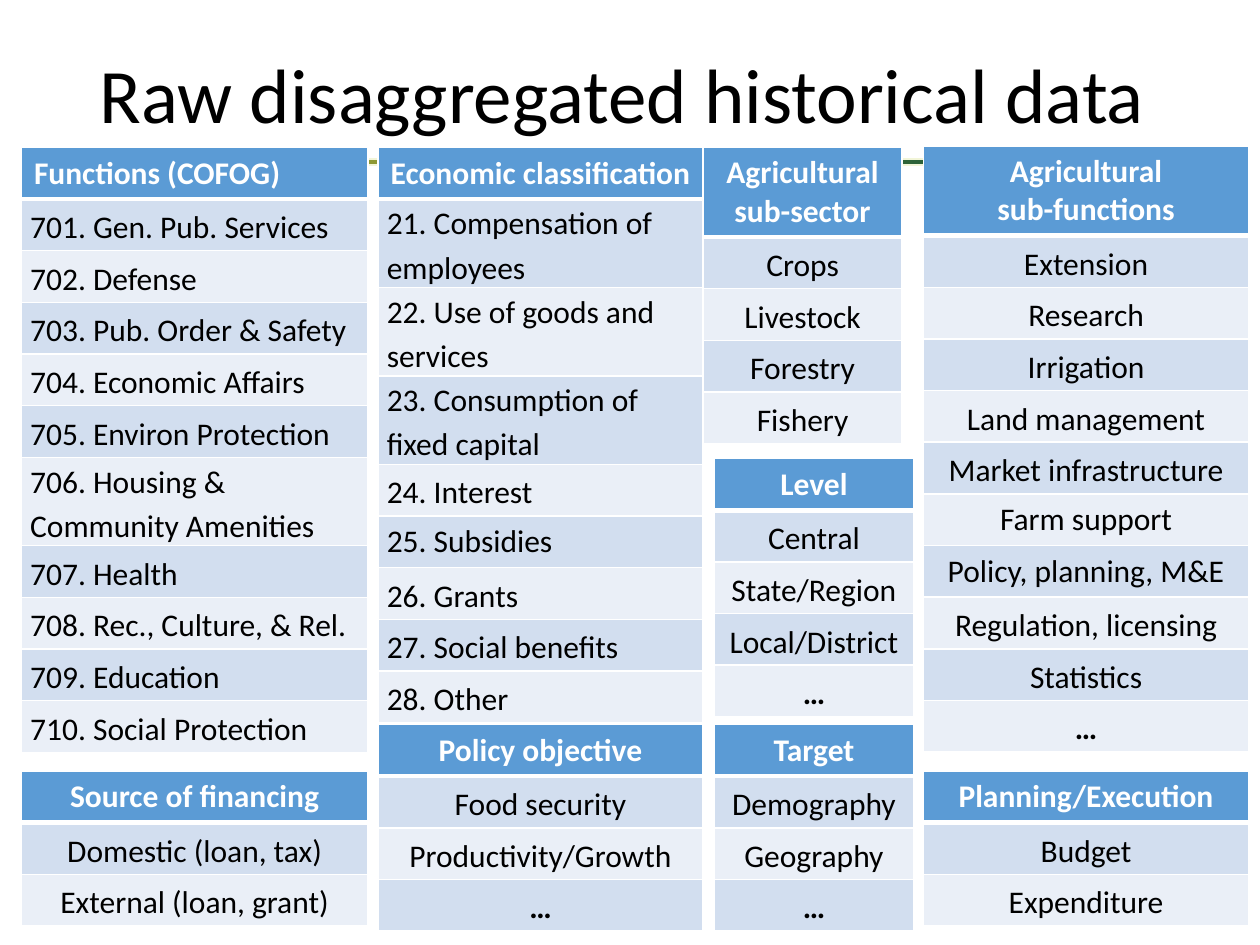
from lxml import etree
from pptx import Presentation
from pptx.dml.color import RGBColor
from pptx.enum.shapes import MSO_SHAPE
from pptx.enum.text import MSO_ANCHOR, PP_ALIGN
from pptx.oxml.ns import qn
from pptx.util import Inches, Pt

RECT = MSO_SHAPE.RECTANGLE
MIDDLE = MSO_ANCHOR.MIDDLE
LEFT, CENTER = PP_ALIGN.LEFT, PP_ALIGN.CENTER

# Content
TITLE = "Raw disaggregated historical data"
FUNCTIONS = [
    "Functions (COFOG)", "701. Gen. Pub. Services", "702. Defense",
    "703. Pub. Order & Safety", "704. Economic Affairs", "705. Environ Protection",
    "706. Housing & Community Amenities", "707. Health",
    "708. Rec., Culture, & Rel.", "709. Education", "710. Social Protection",
]
ECONOMIC = [
    "Economic classification", "21. Compensation of employees",
    "22. Use of goods and services", "23. Consumption of fixed capital",
    "24. Interest", "25. Subsidies", "26. Grants", "27. Social benefits", "28. Other",
]
SUB_SECTORS = ["Agricultural sub-sector", "Crops", "Livestock", "Forestry", "Fishery"]
SUB_FUNCTIONS = [
    "Agricultural\nsub-functions", "Extension", "Research", "Irrigation",
    "Land management", "Market infrastructure", "Farm support",
    "Policy, planning, M&E", "Regulation, licensing", "Statistics", "…",
]
LEVELS = ["Level", "Central", "State/Region", "Local/District", "…"]
OBJECTIVES = ["Policy objective", "Food security", "Productivity/Growth", "…"]
TARGETS = ["Target", "Demography", "Geography", "…"]
PLANNING = ["Planning/Execution", "Budget", "Expenditure"]
FINANCING = ["Source of financing", "Domestic (loan, tax)", "External (loan, grant)"]
SINGLE_SPACED = {"25. Subsidies", "Farm support", "Policy, planning, M&E"}
NO_SIDE_MARGIN = {"Demography"}

# Grid: column (left, width) and tops, in inches
COLUMNS = {
    "functions": (0.17, 2.75),
    "economic": (3, 2.58),
    "sub-sector": (5.58, 1.58),
    "level": (5.67, 1.58),
    "sub-functions": (7.33, 2.58),
}
TOP, LEVEL_TOP, POLICY_TOP, BOTTOM_TOP = 1.17, 3.64, 5.75, 6.12
ROW_HEIGHT = 0.41
TABLES = [
    (FUNCTIONS, "functions", TOP, LEFT),
    (ECONOMIC, "economic", TOP, LEFT),
    (SUB_SECTORS, "sub-sector", TOP, CENTER),
    (SUB_FUNCTIONS, "sub-functions", 1.16, CENTER),
    (LEVELS, "level", LEVEL_TOP, CENTER),
    (OBJECTIVES, "economic", POLICY_TOP, CENTER),
    (TARGETS, "level", POLICY_TOP, CENTER),
    (PLANNING, "sub-functions", BOTTOM_TOP, CENTER),
    (FINANCING, "functions", BOTTOM_TOP, CENTER),
]

FONT = "Calibri"
COLORS = {
    "header": "5B9BD5", "odd": "D2DEEF", "even": "EAEFF7",
    "white": "FFFFFF", "text": "000000",
    "rule_start": "C0B430", "rule_end": "00493A", "rule_line": "F2F5D8",
}


def color(name):
    return RGBColor.from_string(COLORS[name])


def set_font(paragraph, size, color_name, bold=False):
    font = paragraph.font
    font.name, font.size, font.bold = FONT, Pt(size), bold
    font.color.rgb = color(color_name)


def add_borders(cell, top, bottom):
    properties = cell._tc.get_or_add_tcPr()
    for side, points in (("L", 1), ("R", 1), ("T", top), ("B", bottom)):
        line = etree.SubElement(properties, qn(f"a:ln{side}"), w=str(Pt(points)))
        fill = etree.SubElement(line, qn("a:solidFill"))
        etree.SubElement(fill, qn("a:srgbClr"), val=COLORS["white"])


def fill_cell(cell, row, text, alignment):
    header = row == 0
    add_borders(cell, top=3 if row == 1 else 1, bottom=3 if header else 1)
    cell.fill.solid()
    cell.fill.fore_color.rgb = color("header" if header else "odd" if row % 2 else "even")
    cell.vertical_anchor = MIDDLE
    if not header:
        cell.margin_top = cell.margin_bottom = 0
        cell.margin_left = cell.margin_right = Inches(0 if text in NO_SIDE_MARGIN else 0.07)
    cell.text_frame.text = text
    for paragraph in cell.text_frame.paragraphs:
        paragraph.alignment = alignment
        if not header and text not in SINGLE_SPACED:
            paragraph.line_spacing = 1.15
        set_font(paragraph, 18, "white" if header else "text", header or text == "…")


def add_list_table(slide, entries, column, top, alignment):
    left, width = COLUMNS[column]
    table = slide.shapes.add_table(
        len(entries), 1, Inches(left), Inches(top),
        Inches(width), Inches(ROW_HEIGHT * len(entries))).table
    table.horz_banding = False
    for row, text in enumerate(entries):
        table.rows[row].height = Inches(ROW_HEIGHT)
        fill_cell(table.cell(row, 0), row, text, alignment)


def add_rule(slide):
    rule = slide.shapes.add_shape(RECT, Inches(0.68), Inches(1.26), Inches(8.63), Inches(0.05))
    rule.shadow.inherit = False
    rule.fill.gradient()
    rule.fill.gradient_angle = 0
    for stop, position, name in zip(rule.fill.gradient_stops, (0, 1), ("rule_start", "rule_end")):
        stop.position = position
        stop.color.rgb = color(name)
    rule.line.color.rgb = color("rule_line")
    rule.line.width = Pt(1)


def add_title(slide):
    frame = slide.shapes.add_textbox(
        Inches(0.69), Inches(0.37), Inches(8.62), Inches(0.82)).text_frame
    frame.word_wrap = True
    frame.vertical_anchor = MIDDLE
    frame.text = TITLE
    frame.paragraphs[0].line_spacing = 0.9
    set_font(frame.paragraphs[0], 44, "text")


def main():
    deck = Presentation()
    deck.slide_width, deck.slide_height = Inches(10), Inches(7.5)
    slide = deck.slides.add_slide(deck.slide_layouts[6])
    add_rule(slide)
    for entries, column, top, alignment in TABLES:
        add_list_table(slide, entries, column, top, alignment)
    add_title(slide)
    deck.save("out.pptx")


if __name__ == "__main__":
    main()
